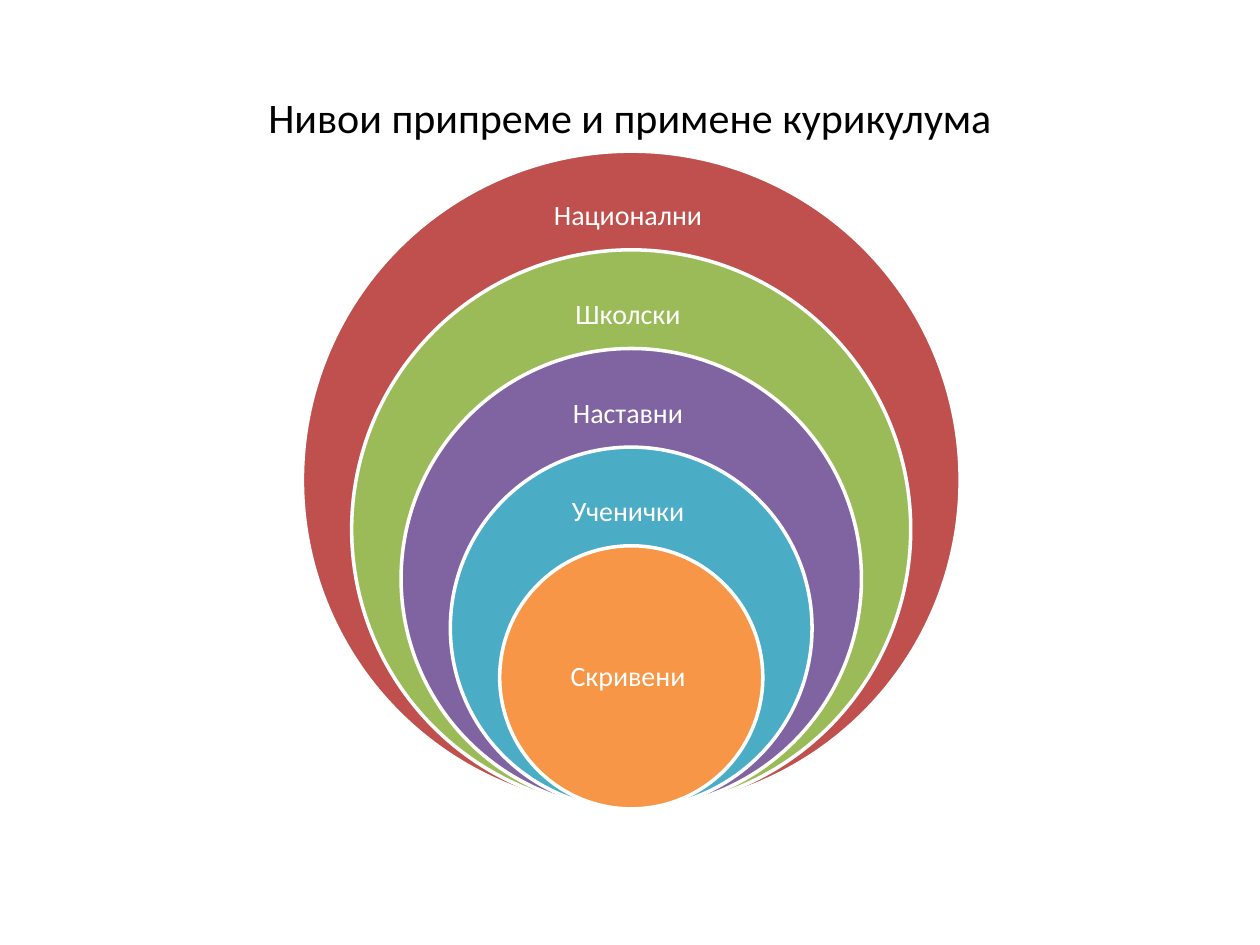
from pptx import Presentation
from pptx.dml.color import RGBColor
from pptx.enum.shapes import MSO_SHAPE
from pptx.enum.text import MSO_ANCHOR, PP_ALIGN
from pptx.util import Inches, Pt

OVAL = MSO_SHAPE.OVAL
MIDDLE = MSO_ANCHOR.MIDDLE
CENTER = PP_ALIGN.CENTER
TITLE_ONLY = 5

FONT = "Calibri"
WHITE = "FFFFFF"
LEVELS = [
    ("Национални ", "C0504D"),
    ("Школски ", "9BBB59"),
    ("Наставни ", "8064A2"),
    ("Ученички ", "4BACC6"),
    ("Скривени ", "F79646"),
]
INNER_RATIO = 0.4   # innermost diameter relative to the outermost
LABEL_DROP = 0.52   # from the top of a ring to the middle of its label
LABEL_W, LABEL_H = 1.7, 0.3


def rgb(hex_color):
    return RGBColor.from_string(hex_color)


def set_text(sp, text, size, color, spacing=1.0):
    tf = sp.text_frame
    tf.word_wrap = True
    tf.vertical_anchor = MIDDLE
    p = tf.paragraphs[0]
    p.alignment = CENTER
    p.line_spacing = spacing
    r = p.add_run()
    r.text = text
    r.font.name = FONT
    r.font.size = Pt(size)
    r.font.color.rgb = rgb(color)


def add_title(s, text, left, top, width, height):
    sp = s.shapes.title
    sp.left, sp.top = Inches(left), Inches(top)
    sp.width, sp.height = Inches(width), Inches(height)
    set_text(sp, text, 24, "000000")


def add_circle(s, center_x, top, diameter, fill):
    sp = s.shapes.add_shape(OVAL, Inches(center_x - diameter / 2), Inches(top),
                            Inches(diameter), Inches(diameter))
    sp.shadow.inherit = False
    sp.fill.solid()
    sp.fill.fore_color.rgb = rgb(fill)
    sp.line.color.rgb = rgb(WHITE)
    sp.line.width = Pt(2)


def add_label(s, text, center_x, center_y):
    sp = s.shapes.add_textbox(Inches(center_x - LABEL_W / 2), Inches(center_y - LABEL_H / 2),
                              Inches(LABEL_W), Inches(LABEL_H))
    tf = sp.text_frame
    tf.margin_left = tf.margin_right = tf.margin_top = tf.margin_bottom = 0
    set_text(sp, text, 16, WHITE, spacing=0.9)


def add_nested_circles(s, levels, left, top, size):
    """Stack circles that share their lowest point, shrinking in equal steps."""
    center_x = left + size / 2
    last = len(levels) - 1
    step = size * (1 - INNER_RATIO) / last
    for i, (text, fill) in enumerate(levels):
        diameter = size - i * step
        circle_top = top + i * step
        add_circle(s, center_x, circle_top, diameter, fill)
        drop = diameter / 2 if i == last else LABEL_DROP
        add_label(s, text, center_x, circle_top + drop)


def main():
    prs = Presentation()
    prs.slide_width, prs.slide_height = Inches(10), Inches(7.5)
    s = prs.slides.add_slide(prs.slide_layouts[TITLE_ONLY])
    add_title(s, "Нивои припреме и примене курикулума", 0.5, 0.3, 9, 1.25)
    add_nested_circles(s, LEVELS, 2.4, 1.2, 5.22)
    prs.save("out.pptx")


if __name__ == "__main__":
    main()
